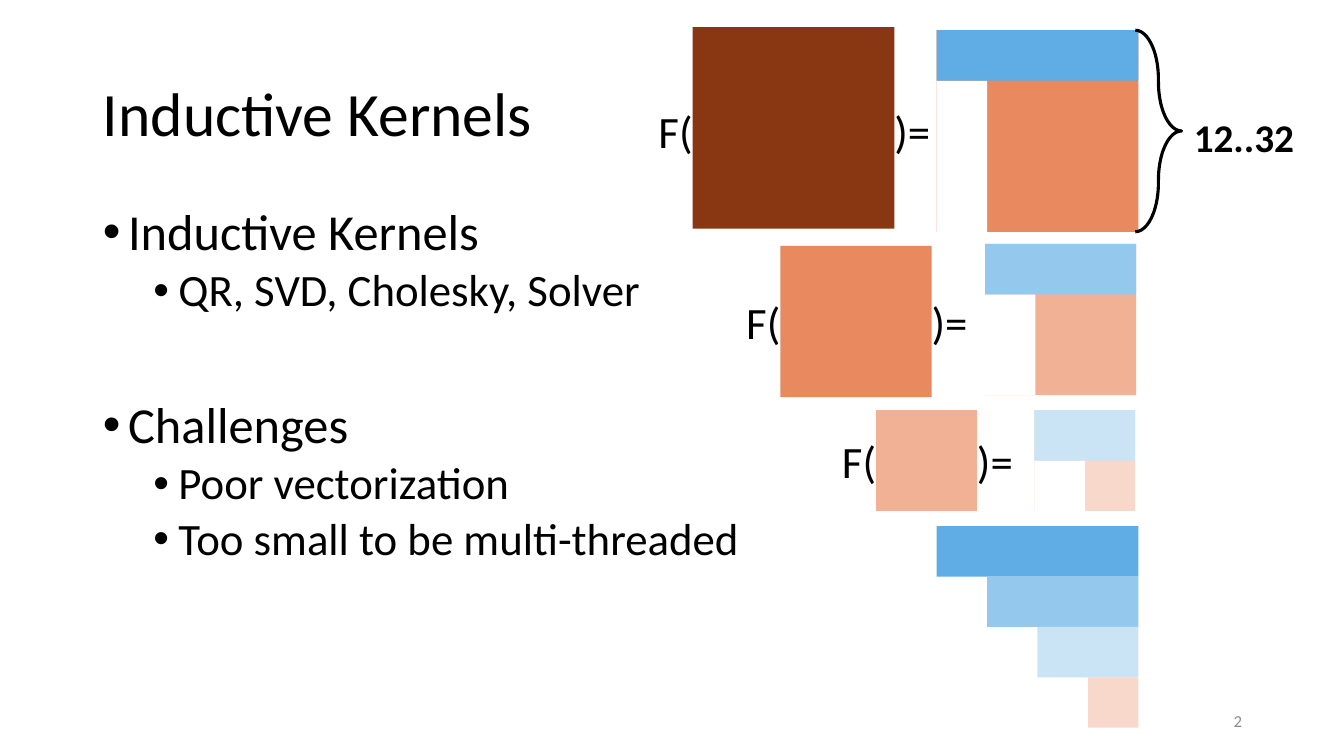
from dataclasses import dataclass

from lxml import etree
from pptx import Presentation
from pptx import util as u
from pptx.dml.color import RGBColor
from pptx.enum import shapes, text
from pptx.oxml.ns import qn


@dataclass(frozen=True)
class Theme:
    font: str = "Calibri"
    ink: str = "000000"
    gray: str = "8C8C8C"
    white: str = "FFFFFF"
    warm: tuple = ("893713", "E98960", "F0B195", "F8D8CA")
    blue: tuple = ("5FADE4", "94C8ED", "CAE4F6")
    title: int = 44
    levels: tuple = (36, 32)
    math: int = 32
    label: int = 28
    small: int = 12


T = Theme()
STEP = 0.5  # side of one matrix cell
ALIGN = text.PP_ALIGN

POINTS = [  # level, words, space before
    (0, "Inductive Kernels", 10),
    (1, "QR, SVD, Cholesky, Solver", 5),
    (0, "Challenges", 59.5),
    (1, "Poor vectorization", 5),
    (1, "Too small to be multi-threaded", 5),
]

ROWS = [  # cells per side, input corner, result corner, text middle
    (4, (6.87, 0.27), (9.29, 0.3), 1.3),
    (3, (7.74, 2.44), (9.77, 2.42), 3.19),
    (2, (8.69, 4.07), (10.26, 4.07), 4.57),
]


def style(item, size, color=T.ink, bold=False):
    font = item.font
    font.name, font.size, font.bold = T.font, u.Pt(size), bold
    font.color.rgb = RGBColor.from_string(color)


def put(shape, x, y, w, h):
    shape.left, shape.top = u.Inches(x), u.Inches(y)
    shape.width, shape.height = u.Inches(w), u.Inches(h)


def block(slide, x, y, w, h, color):
    box = slide.shapes.add_shape(
        shapes.MSO_SHAPE.RECTANGLE, *map(u.Inches, (x, y, w, h)))
    box.shadow.inherit = False
    box.fill.solid()
    box.fill.fore_color.rgb = RGBColor.from_string(color)
    box.line.fill.background()


def label(slide, x, y, w, h, words, size, align=ALIGN.LEFT, color=T.ink, bold=False):
    frame = slide.shapes.add_textbox(*map(u.Inches, (x, y, w, h))).text_frame
    frame.margin_left = frame.margin_right = 0
    frame.word_wrap = True
    frame.vertical_anchor = text.MSO_ANCHOR.MIDDLE
    para = frame.paragraphs[0]
    para.text, para.alignment = words, align
    style(para, size, color, bold)
    return para


# Title
def title(slide, x, y, w, h):
    shape = slide.shapes.title
    put(shape, x, y, w, h)
    frame = shape.text_frame
    frame.text = "Inductive Kernels"
    frame.auto_size = text.MSO_AUTO_SIZE.NONE
    frame.vertical_anchor = text.MSO_ANCHOR.MIDDLE
    para = frame.paragraphs[0]
    para.alignment, para.line_spacing = ALIGN.LEFT, 0.9
    style(para, T.title)


# Bullet list
def points(slide, x, y, w, h):
    shape = slide.placeholders[1]
    put(shape, x, y, w, h)
    frame = shape.text_frame
    frame.auto_size = text.MSO_AUTO_SIZE.NONE
    frame.vertical_anchor = text.MSO_ANCHOR.TOP
    for i, (level, words, gap) in enumerate(POINTS):
        para = frame.add_paragraph() if i else frame.paragraphs[0]
        para.text, para.level = words, level
        para.line_spacing, para.space_before = 0.9, u.Pt(gap)
        style(para, T.levels[level])
        props = para._p.get_or_add_pPr()
        props.set("marL", str(u.Inches(0.25 + 0.5 * level)))
        props.set("indent", str(u.Inches(-0.25)))
        bullet = etree.Element(qn("a:buChar"), char="•")
        props.find(qn("a:defRPr")).addprevious(bullet)


# One recursion step: F(input) = top band plus smaller matrix
def kernel(slide, i, cells, start, result, mid):
    side = cells * STEP
    x, y = start
    block(slide, x, y, side, side, T.warm[i])
    label(slide, x - 0.6, mid - 0.32, 0.6, 0.64, "F(", T.math, ALIGN.RIGHT)
    label(slide, x + side, mid - 0.32, 0.6, 0.64, ")=", T.math)
    x, y = result
    block(slide, x, y, side, side, T.warm[i + 1])
    block(slide, x, y + STEP, STEP, side - STEP, T.white)
    block(slide, x, y, side, STEP, T.blue[i])


# Final triangular result
def stairs(slide, x, y, side):
    for i, color in enumerate(T.blue + T.warm[-1:]):
        cut = i * STEP
        block(slide, x + cut, y + cut, side - cut, STEP, color)


# Brace with the matrix size
def brace(slide, x, y, w, h):
    mark = slide.shapes.add_shape(
        shapes.MSO_SHAPE.RIGHT_BRACE, *map(u.Inches, (x, y, w, h)))
    mark.shadow.inherit = False
    mark.adjustments[0] = 1.06
    mark.fill.background()
    mark.line.color.rgb = RGBColor.from_string(T.ink)
    mark.line.width = u.Pt(2.25)
    label(slide, x + w + 0.12, y + 0.77, 1.1, 0.57, "12..32", T.label, bold=True)


# Slide number
def number(slide, x, y, w, h):
    label(slide, x, y, w, h, "2", T.small, ALIGN.RIGHT, T.gray)


def main():
    deck = Presentation()
    deck.slide_width, deck.slide_height = u.Inches(13.33), u.Inches(7.5)
    slide = deck.slides.add_slide(deck.slide_layouts[1])
    number(slide, 9.42, 6.95, 2.9, 0.4)
    title(slide, 0.92, 0.43, 4.92, 1.45)
    for i, row in enumerate(ROWS):
        kernel(slide, i, *row)
    stairs(slide, 9.29, 5.22, 2)
    points(slide, 0.92, 2, 6.63, 4.76)
    brace(slide, 11.26, 0.3, 0.46, 2)
    deck.save("out.pptx")


if __name__ == "__main__":
    main()
